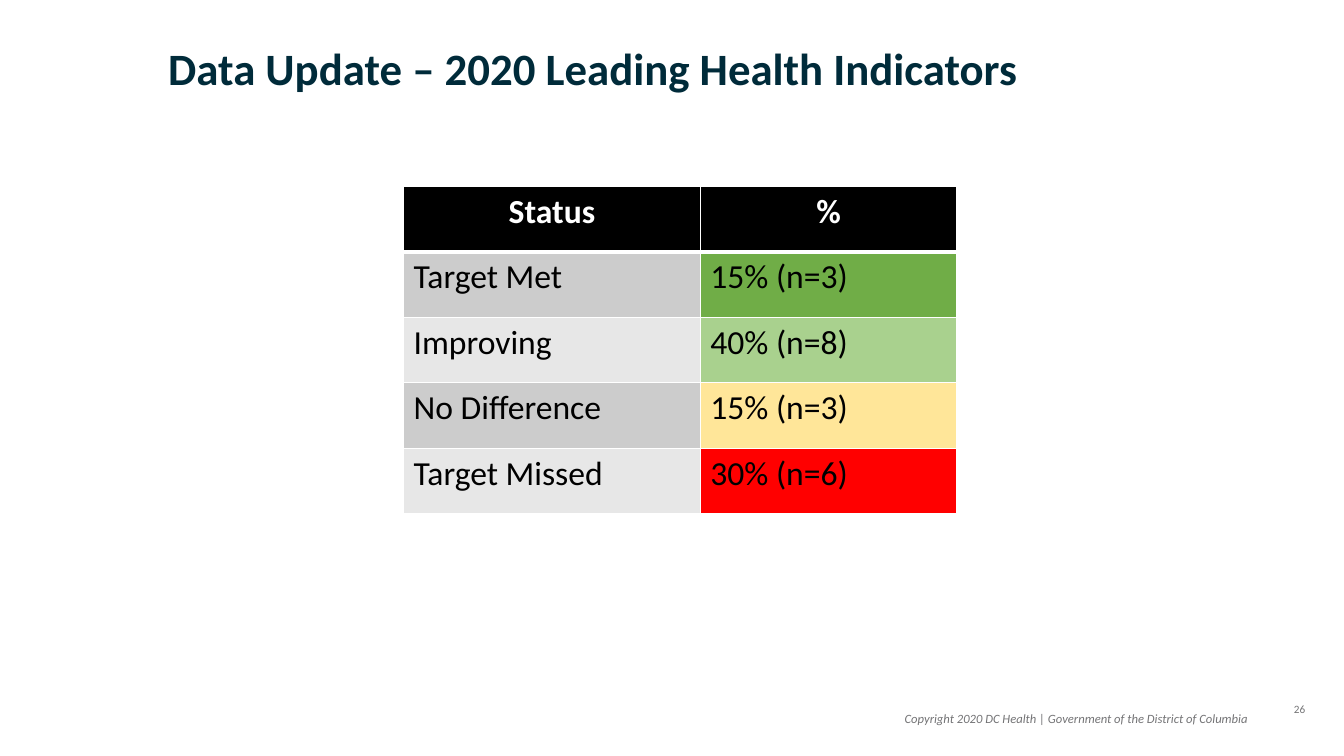
import pptx
import pptx.util
import pptx.dml.color
import pptx.enum.text
import pptx.oxml
import pptx.oxml.ns

ALIGN = pptx.enum.text.PP_ALIGN
THEME = {
    "font": "Calibri",
    "title": "002B3A", "muted": "747476", "white": "FFFFFF", "black": "000000",
    "bands": ("CCCCCC", "E7E7E7"),
    "title_pt": 32, "table_pt": 24, "footer_pt": 9, "number_pt": 8,
}

prs = pptx.Presentation()
prs.slide_width = pptx.util.Inches(13.33)
prs.slide_height = pptx.util.Inches(7.5)
s = prs.slides.add_slide(prs.slide_layouts[6])


def area(left, top, width, height):
    """Turn percentages of the slide into lengths."""
    w, h = prs.slide_width / 100, prs.slide_height / 100
    return [int(v) for v in (left * w, top * h, width * w, height * h)]


def write(tf, text, size, color, align=ALIGN.LEFT, bold=False, italic=False):
    tf.word_wrap = True
    p = tf.paragraphs[0]
    p.text = text
    p.alignment = align
    p.font.name = THEME["font"]
    p.font.size = pptx.util.Pt(THEME[size])
    p.font.color.rgb = pptx.dml.color.RGBColor.from_string(THEME[color])
    p.font.bold = bold
    p.font.italic = italic
    return p


# Title
sp = s.shapes.add_textbox(*area(11.78, 5.47, 84.47, 8.27))
p = write(sp.text_frame, "Data Update – 2020 Leading Health Indicators",
          "title_pt", "title", bold=True)
p.line_spacing = 0.9

# Status table
rows = [
    ("Status", "%", "000000"),
    ("Target Met", "15% (n=3)", "70AD47"),
    ("Improving", "40% (n=8)", "A9D18E"),
    ("No Difference", "15% (n=3)", "FFE699"),
    ("Target Missed", "30% (n=6)", "FF0000"),
]
col_shares = (22.08, 19.1)
table = s.shapes.add_table(
    len(rows), 2, *area(30.03, 24.67, sum(col_shares), 43.3)).table
for column, share in zip(table.columns, col_shares):
    column.width = int(prs.slide_width * share / 100)

for i, (status, value, color) in enumerate(rows):
    header = i == 0
    label_fill = color if header else THEME["bands"][(i - 1) % 2]
    for j, (text, fill) in enumerate(((status, label_fill), (value, color))):
        cell = table.cell(i, j)
        write(cell.text_frame, text, "table_pt", "white" if header else "black",
              ALIGN.CENTER if header else ALIGN.LEFT, bold=header)
        # White borders, heavier between header and body
        for side in "LRTB":
            heavy = (i, side) in ((0, "B"), (1, "T"))
            cell._tc.get_or_add_tcPr().append(pptx.oxml.parse_xml(
                f'<a:ln{side} {pptx.oxml.ns.nsdecls("a")} '
                f'w="{pptx.util.Pt(3 if heavy else 1)}"><a:solidFill>'
                f'<a:srgbClr val="{THEME["white"]}"/></a:solidFill></a:ln{side}>'))
        cell.fill.solid()
        cell.fill.fore_color.rgb = pptx.dml.color.RGBColor.from_string(fill)

# Footer and slide number
sp = s.shapes.add_textbox(*area(52.74, 93.33, 40.81, 4.93))
write(sp.text_frame, "Copyright 2020 DC Health | Government of the District of Columbia",
      "footer_pt", "muted", ALIGN.RIGHT, italic=True)
sp = s.shapes.add_textbox(*area(93.85, 92.27, 5.7, 5.33))
write(sp.text_frame, "26", "number_pt", "muted", ALIGN.CENTER)

prs.save("out.pptx")
